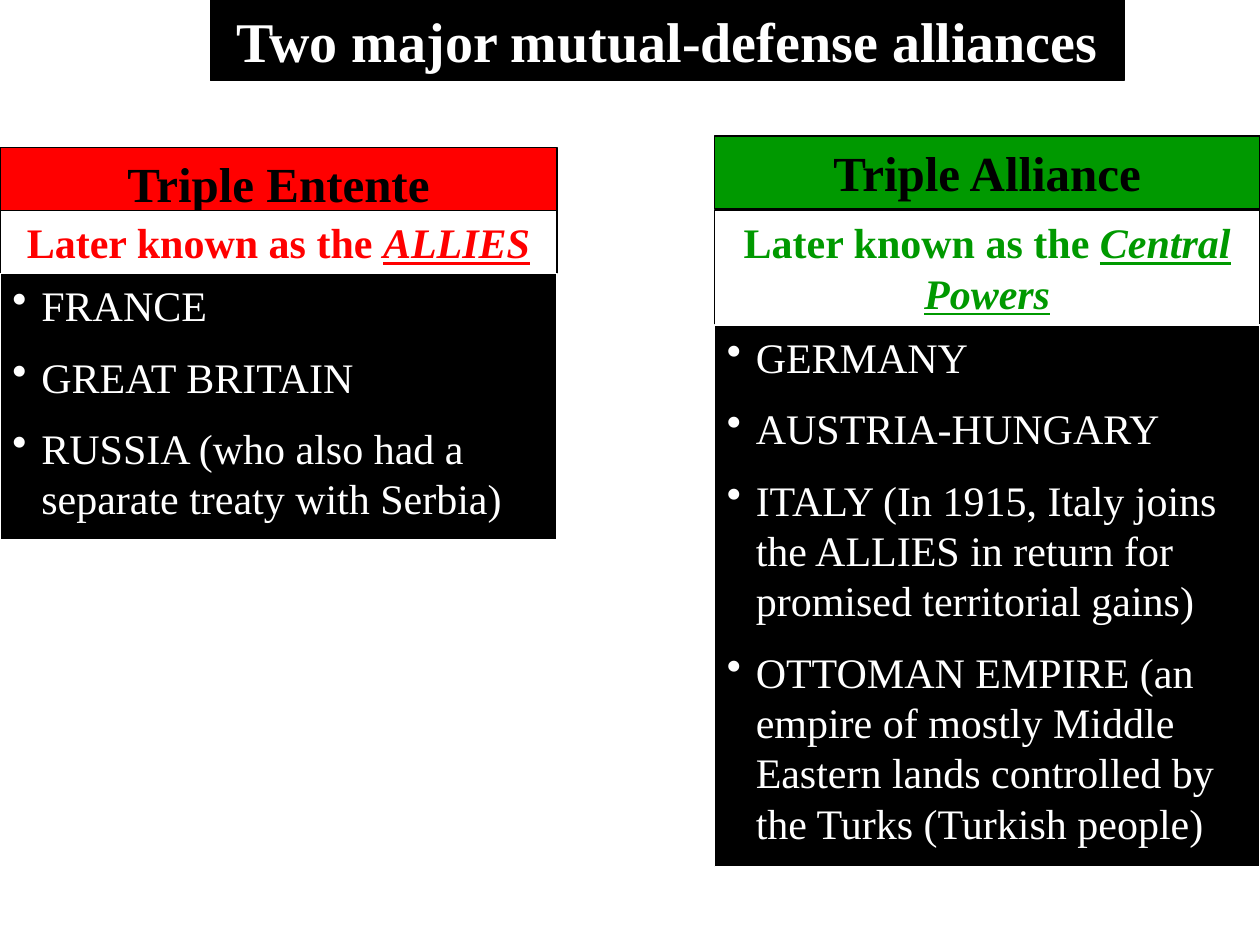
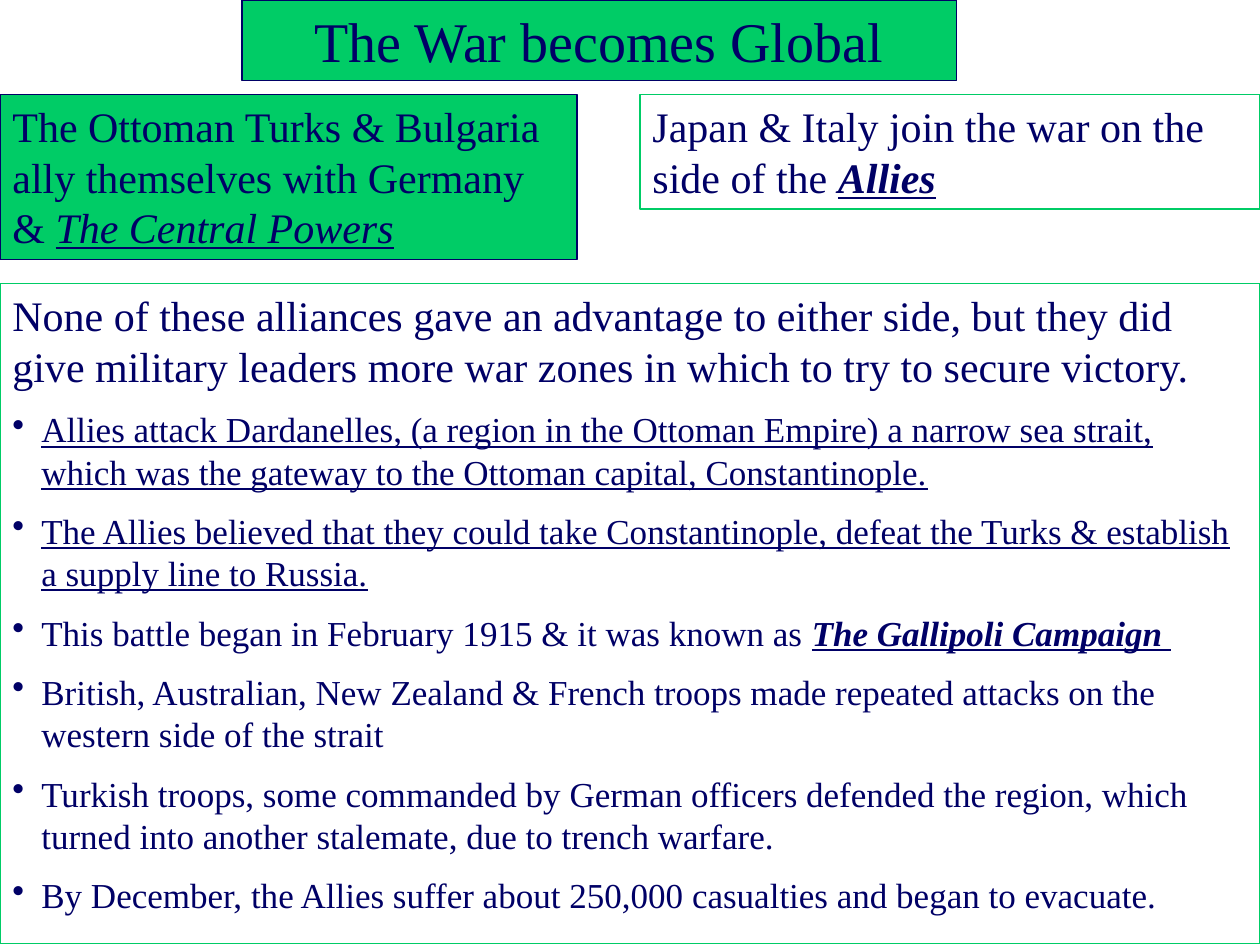
from lxml import etree
from pptx import Presentation
from pptx import util as u
from pptx.dml import color
from pptx.enum import shapes, text
from pptx.oxml import ns

FONT = "Times New Roman"
BLACK, WHITE, RED, GREEN = "000000", "FFFFFF", "FF0000", "009900"
NAVY, MINT = "000066", "00CC66"
TITLE_SIZE, HEADING_SIZE, BODY_SIZE, DETAIL_SIZE = 32, 28, 24, 20
BULLET_INDENT = u.Inches(0.23)
TITLE_HEIGHT = 0.64


def rgb(value):
    """Turn a hex string into a colour."""
    return color.RGBColor.from_string(value)


def add_box(slide, left, top, width, height, fill, line):
    """Add a bordered rectangle and return its text frame."""
    shape = slide.shapes.add_shape(
        shapes.MSO_SHAPE.RECTANGLE,
        u.Inches(left), u.Inches(top), u.Inches(width), u.Inches(height))
    shape.shadow.inherit = False
    shape.fill.solid()
    shape.fill.fore_color.rgb = rgb(fill)
    shape.line.color.rgb = rgb(line)
    shape.line.width = u.Pt(0.75)
    frame = shape.text_frame
    frame.word_wrap = True
    frame.vertical_anchor = text.MSO_ANCHOR.TOP
    frame.auto_size = text.MSO_AUTO_SIZE.SHAPE_TO_FIT_TEXT
    return frame


def add_bullet(paragraph):
    """Give a paragraph a round bullet and a hanging indent."""
    properties = paragraph._p.get_or_add_pPr()
    properties.set("marL", str(BULLET_INDENT))
    properties.set("indent", str(-BULLET_INDENT))
    etree.SubElement(properties, ns.qn("a:buChar")).set("char", "•")


def add_paragraph(frame, runs, size, ink, bold=False, centred=False, bullet=False):
    """Write (text, style) runs, where style holds any of the letters b, i and u."""
    first = not frame.paragraphs[0].runs
    paragraph = frame.paragraphs[0] if first else frame.add_paragraph()
    if bullet:
        add_bullet(paragraph)
    paragraph.alignment = text.PP_ALIGN.CENTER if centred else text.PP_ALIGN.LEFT
    if not first:
        paragraph.space_before = u.Pt(size / 2)
    paragraph.font.name = FONT
    for words, style in runs:
        run = paragraph.add_run()
        run.text = words
        run.font.name = FONT
        run.font.size = u.Pt(size)
        run.font.color.rgb = rgb(ink)
        run.font.bold = bold or "b" in style
        run.font.italic = "i" in style
        run.font.underline = "u" in style


def add_title(slide, left, width, words, fill, line, ink, bold=False):
    """Add the title band at the top edge."""
    frame = add_box(slide, left, 0, width, TITLE_HEIGHT, fill, line)
    add_paragraph(frame, [(words, "")], TITLE_SIZE, ink, bold, centred=True)


def add_alliance(slide, left, width, tops, heights, accent, name, later_name, members):
    """Add a column with an alliance's name, its later name and its members."""
    heading, later, listing = zip(tops, heights)
    frame = add_box(slide, left, heading[0], width, heading[1], accent, BLACK)
    add_paragraph(frame, [(name, "")], HEADING_SIZE, BLACK, bold=True, centred=True)
    frame = add_box(slide, left, later[0], width, later[1], WHITE, BLACK)
    add_paragraph(frame, [("Later known as the ", ""), (later_name, "iu")],
                  BODY_SIZE, accent, bold=True, centred=True)
    frame = add_box(slide, left, listing[0], width, listing[1], BLACK, WHITE)
    for member in members:
        add_paragraph(frame, [(member, "")], BODY_SIZE, WHITE, bullet=True)


def build_alliances(slide):
    """Build the slide that compares the two alliances."""
    add_title(slide, 1.67, 7.25, "Two major mutual-defense alliances",
              BLACK, BLACK, WHITE, bold=True)
    add_alliance(slide, 0, 4.42, (1.17, 1.67, 2.17), (0.58, 0.51, 2.11), RED,
                 "Triple Entente", "ALLIES",
                 ["FRANCE", "GREAT BRITAIN",
                  "RUSSIA (who also had a separate treaty with Serbia)"])
    add_alliance(slide, 5.67, 4.33, (1.08, 1.67, 2.58), (0.58, 0.91, 4.3), GREEN,
                 "Triple Alliance", "Central Powers",
                 ["GERMANY", "AUSTRIA-HUNGARY",
                  "ITALY (In 1915, Italy joins the ALLIES in return for promised "
                  "territorial gains)",
                  "OTTOMAN EMPIRE (an empire of mostly Middle Eastern lands "
                  "controlled by the Turks (Turkish people)"])


def build_global_war(slide):
    """Build the slide on new belligerents and the Dardanelles."""
    add_title(slide, 1.92, 5.67, "The War becomes Global", MINT, NAVY, NAVY)
    frame = add_box(slide, 0, 0.75, 4.58, 1.31, MINT, NAVY)
    add_paragraph(frame, [
        ("The Ottoman Turks & Bulgaria ally themselves with Germany & ", ""),
        ("The Central Powers", "iu")], BODY_SIZE, NAVY)
    frame = add_box(slide, 5.08, 0.75, 4.92, 0.91, WHITE, MINT)
    add_paragraph(frame, [("Japan & Italy join the war on the side of the ", ""),
                          ("Allies", "biu")], BODY_SIZE, NAVY)
    frame = add_box(slide, 0, 2.25, 10, 5.24, WHITE, MINT)
    add_paragraph(frame, [
        ("None of these alliances gave an advantage to either side, but they did "
         "give military leaders more war zones in which to try to secure victory.", "")],
        BODY_SIZE, NAVY)
    campaign = [
        [("Allies attack Dardanelles, (a region in the Ottoman Empire) a narrow sea "
          "strait, which was the gateway to the Ottoman capital, Constantinople.", "u")],
        [("The Allies believed that they could take Constantinople, defeat the Turks "
          "& establish a supply line to Russia.", "u")],
        [("This battle began in February 1915 & it was known as ", ""),
         ("The Gallipoli Campaign ", "biu")],
        [("British, Australian, New Zealand & French troops made repeated attacks on "
          "the western side of the strait", "")],
        [("Turkish troops, some commanded by German officers defended the region, "
          "which turned into another stalemate, due to trench warfare.", "")],
        [("By December, the Allies suffer about 250,000 casualties and began to "
          "evacuate.", "")],
    ]
    for runs in campaign:
        add_paragraph(frame, runs, DETAIL_SIZE, NAVY, bullet=True)


def main():
    """Build and save the presentation."""
    presentation = Presentation()
    presentation.slide_width = u.Inches(10)
    presentation.slide_height = u.Inches(7.5)
    for build in (build_alliances, build_global_war):
        build(presentation.slides.add_slide(presentation.slide_layouts[6]))
    presentation.save("out.pptx")


if __name__ == "__main__":
    main()
